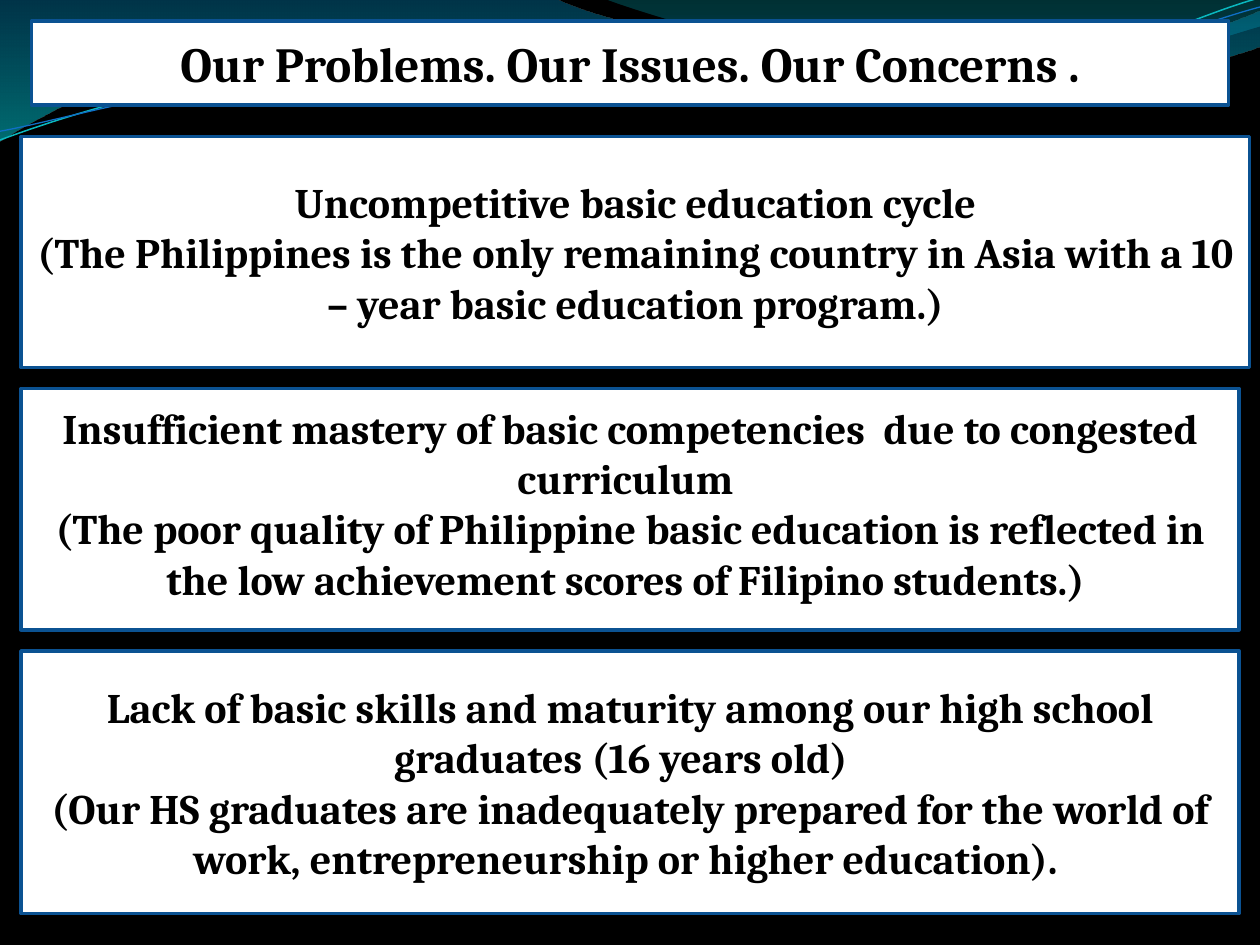
from typing import NamedTuple

from lxml.etree import SubElement
from pptx import Presentation
from pptx.dml.color import RGBColor
from pptx.enum.shapes import MSO_SHAPE as Shape
from pptx.enum.text import MSO_ANCHOR as Anchor, PP_ALIGN as Align
from pptx.oxml.ns import qn
from pptx.util import Pt


class Stop(NamedTuple):
    pos: float
    color: str
    alpha: int


class Wave(NamedTuple):
    """Segments hold an end point, or two control points and an end point."""
    start: tuple
    segs: list
    stops: tuple = ()
    line: str = ""
    width: float = 0


class Box(NamedTuple):
    left: float
    top: float
    width: float
    height: float
    size: float
    lines: tuple
    foot: float = 3.6


WAVES = [
    Wave((0, 0), [
        (317, -1), (343, 12, 478, 45, 546, 45), (614, 45, 690, 19, 720, 6),
        (721, 26), (708, 32, 626, 55, 537, 54), (448, 54, 275, 20, 185, 24),
        (93, 26, 33, 60, -1, 81), (0, 0),
    ], (Stop(0, "0074A1", 45), Stop(1, "00C6CF", 55))),
    Wave((345, -1), [
        (367, 8, 491, 45, 554, 47), (616, 50, 692, 23, 720, 15), (720, 0),
        (345, -1),
    ], (Stop(0, "00A1A9", 30), Stop(0.8, "008BBF", 45))),
    Wave((0, 80), [
        (35, 67, 114, 41, 199, 37), (284, 34, 427, 64, 513, 58),
        (600, 51, 675, 11, 719, -1),
    ], line="0AB8BF", width=0.85),
    Wave((0, 75), [
        (34, 69, 118, 44, 204, 40), (290, 37, 430, 60, 516, 54),
        (602, 48, 678, 15, 720, 4),
    ], line="0F6FC6", width=0.75),
]

BOXES = [
    Box(18, 12, 684, 48, 28, ("Our Problems. Our Issues. Our Concerns .",)),
    Box(12, 222, 696, 138, 24, (
        "Insufficient mastery of basic competencies  due to congested curriculum ",
        "(The poor quality of Philippine basic education is reflected in "
        "the low achievement scores of Filipino students.) "), foot=10.8),
    Box(12, 372, 696, 150, 24, (
        "Lack of basic skills and maturity among our high school graduates "
        "(16 years old)  ",
        "(Our HS graduates are inadequately prepared for the world of work, "
        "entrepreneurship or higher education). ")),
    Box(12, 78, 702, 132, 24, (
        "Uncompetitive basic education cycle",
        "(The Philippines is the only remaining country in Asia with a "
        "10 – year basic education program.)")),
]


def rgb(code: str) -> RGBColor:
    return RGBColor.from_string(code)


def bend(shape, segs: list) -> None:
    """Join each three line points of a curved segment into one Bézier curve."""
    route = next(shape.element.iter(qn("a:path")))
    nodes = iter(route.findall(qn("a:lnTo")))
    for seg in segs:
        node = next(nodes)
        if len(seg) == 2:
            continue
        curve = SubElement(route, qn("a:cubicBezTo"))
        node.addprevious(curve)
        for part in (node, next(nodes), next(nodes)):
            curve.append(part[0])
            route.remove(part)


def add_wave(slide, wave: Wave) -> None:
    pen = slide.shapes.build_freeform(*map(Pt, wave.start))
    spots = [(Pt(x), Pt(y)) for seg in wave.segs
             for x, y in zip(seg[::2], seg[1::2])]
    pen.add_line_segments(spots, close=bool(wave.stops))
    shape = pen.convert_to_shape()
    bend(shape, wave.segs)
    shape.shadow.inherit = False
    if not wave.stops:
        shape.fill.background()
        shape.line.color.rgb = rgb(wave.line)
        shape.line.width = Pt(wave.width)
        return
    shape.line.fill.background()
    fill = shape.fill
    fill.gradient()
    fill.gradient_angle = 270
    for mark, stop in zip(fill.gradient_stops, wave.stops):
        mark.position = stop.pos
        mark.color.rgb = rgb(stop.color)
    tints = shape.element.spPr.iter(qn("a:srgbClr"))
    for tint, stop in zip(tints, wave.stops):
        SubElement(tint, qn("a:alpha"), val=str(stop.alpha * 1000))


def add_box(slide, box: Box) -> None:
    shape = slide.shapes.add_shape(
        Shape.RECTANGLE, *map(Pt, (box.left, box.top, box.width, box.height)))
    shape.shadow.inherit = False
    shape.fill.solid()
    shape.fill.fore_color.rgb = rgb("FFFFFF")
    shape.line.color.rgb = rgb("0B5292")
    shape.line.width = Pt(2)
    frame = shape.text_frame
    frame.word_wrap = True
    frame.vertical_anchor = Anchor.MIDDLE
    frame.margin_bottom = Pt(box.foot)
    style = {"name": "Cambria", "size": Pt(box.size), "bold": True}
    for i, line in enumerate(box.lines):
        para = frame.add_paragraph() if i else frame.paragraphs[0]
        para.alignment = Align.CENTER
        run = para.add_run()
        run.text = line
        for key, value in style.items():
            setattr(run.font, key, value)
        run.font.color.rgb = rgb("000000")


def main() -> None:
    deck = Presentation()
    deck.slide_width, deck.slide_height = Pt(720), Pt(540)
    slide = deck.slides.add_slide(deck.slide_layouts[6])
    back = slide.background.fill
    back.solid()
    back.fore_color.rgb = rgb("000000")
    for wave in WAVES:
        add_wave(slide, wave)
    for box in BOXES:
        add_box(slide, box)
    deck.save("out.pptx")


if __name__ == "__main__":
    main()
